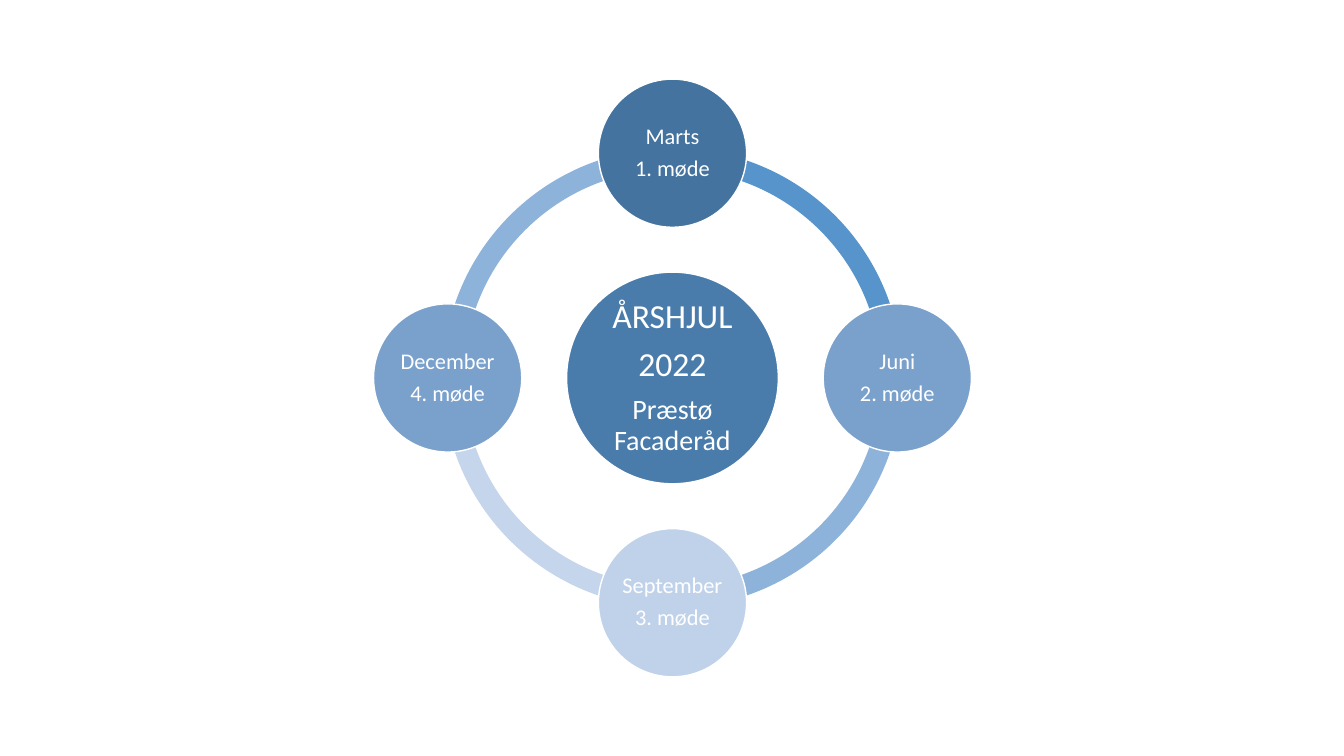
"""Build the year wheel slide with four meetings around a centre circle."""
from dataclasses import dataclass
from math import cos, radians, sin

from pptx import Presentation
from pptx.dml.color import RGBColor
from pptx.enum.shapes import MSO_SHAPE as Preset
from pptx.enum.text import MSO_ANCHOR as Anchor, PP_ALIGN as Align
from pptx.util import Inches, Pt

COLOURS = {
    "centre": "497CAB",
    "dark": "43739E",
    "medium": "7AA1CC",
    "light": "C0D2EA",
    "arc_dark": "5794CB",
    "arc_medium": "8EB3DB",
    "arc_light": "C5D5EB",
    "white": "FFFFFF",
}
FONT = "Calibri"
CENTRE_X, CENTRE_Y = 6.67, 3.75
ORBIT = 2.23
RING_SIZE, CENTRE_SIZE, MEETING_SIZE = 4.56, 2.1, 1.47
ADJUSTMENT_PER_DEGREE = 0.6


@dataclass
class Line:
    text: str
    size: int


@dataclass
class Meeting:
    month: str
    angle: int
    fill: str
    arc_fill: str


TITLE = [Line("ÅRSHJUL", 24), Line("2022", 24), Line("Præstø Facaderåd", 20)]
MEETINGS = [
    Meeting("Marts", 270, "dark", "arc_dark"),
    Meeting("Juni", 0, "medium", "arc_medium"),
    Meeting("September", 90, "light", "arc_light"),
    Meeting("December", 180, "medium", "arc_medium"),
]


def colour(name: str) -> RGBColor:
    return RGBColor.from_string(COLOURS[name])


def add_centred(page, preset: Preset, x: float, y: float, size: float, fill: str):
    shape = page.shapes.add_shape(
        preset, Inches(x - size / 2), Inches(y - size / 2), Inches(size), Inches(size)
    )
    shape.shadow.inherit = False
    shape.fill.solid()
    shape.fill.fore_color.rgb = colour(fill)
    return shape


def add_arc(page, meeting: Meeting) -> None:
    arc = add_centred(page, Preset.BLOCK_ARC, CENTRE_X, CENTRE_Y, RING_SIZE, meeting.arc_fill)
    arc.line.fill.background()
    arc.adjustments[0] = meeting.angle * ADJUSTMENT_PER_DEGREE
    arc.adjustments[1] = (meeting.angle + 90) % 360 * ADJUSTMENT_PER_DEGREE
    arc.adjustments[2] = 0.046


def add_circle(
    page, x: float, y: float, size: float, fill: str, lines: list[Line], inset: float
) -> None:
    circle = add_centred(page, Preset.OVAL, x, y, size, fill)
    circle.line.color.rgb = colour("white")
    circle.line.width = Pt(1)
    frame = circle.text_frame
    frame.word_wrap = True
    frame.vertical_anchor = Anchor.MIDDLE
    frame.margin_left = frame.margin_right = Inches(inset)
    frame.margin_top = frame.margin_bottom = Inches(inset)
    for index, line in enumerate(lines):
        para = frame.add_paragraph() if index else frame.paragraphs[0]
        para.text = line.text
        para.alignment = Align.CENTER
        para.line_spacing = 0.9
        para.space_after = Pt(line.size * 0.35)
        para.font.name = FONT
        para.font.size = Pt(line.size)
        para.font.color.rgb = colour("white")


def main() -> None:
    deck = Presentation()
    deck.slide_width, deck.slide_height = Inches(13.33), Inches(7.5)
    page = deck.slides.add_slide(deck.slide_layouts[6])
    for meeting in MEETINGS:
        add_arc(page, meeting)
    add_circle(page, CENTRE_X, CENTRE_Y, CENTRE_SIZE, "centre", TITLE, 0.03)
    for number, meeting in enumerate(MEETINGS, start=1):
        x = CENTRE_X + ORBIT * cos(radians(meeting.angle))
        y = CENTRE_Y + ORBIT * sin(radians(meeting.angle))
        lines = [Line(meeting.month, 16), Line(f"{number}. møde", 16)]
        add_circle(page, x, y, MEETING_SIZE, meeting.fill, lines, 0.02)
    deck.save("out.pptx")


if __name__ == "__main__":
    main()
